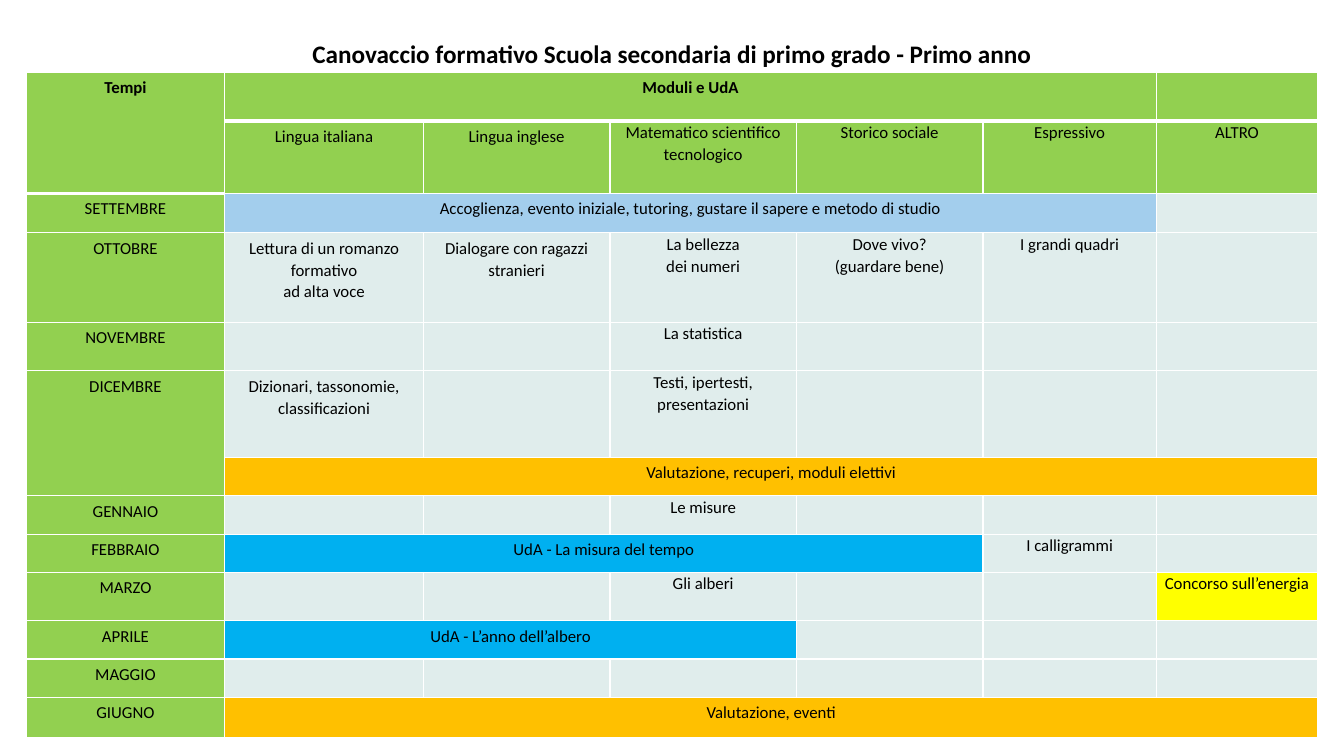
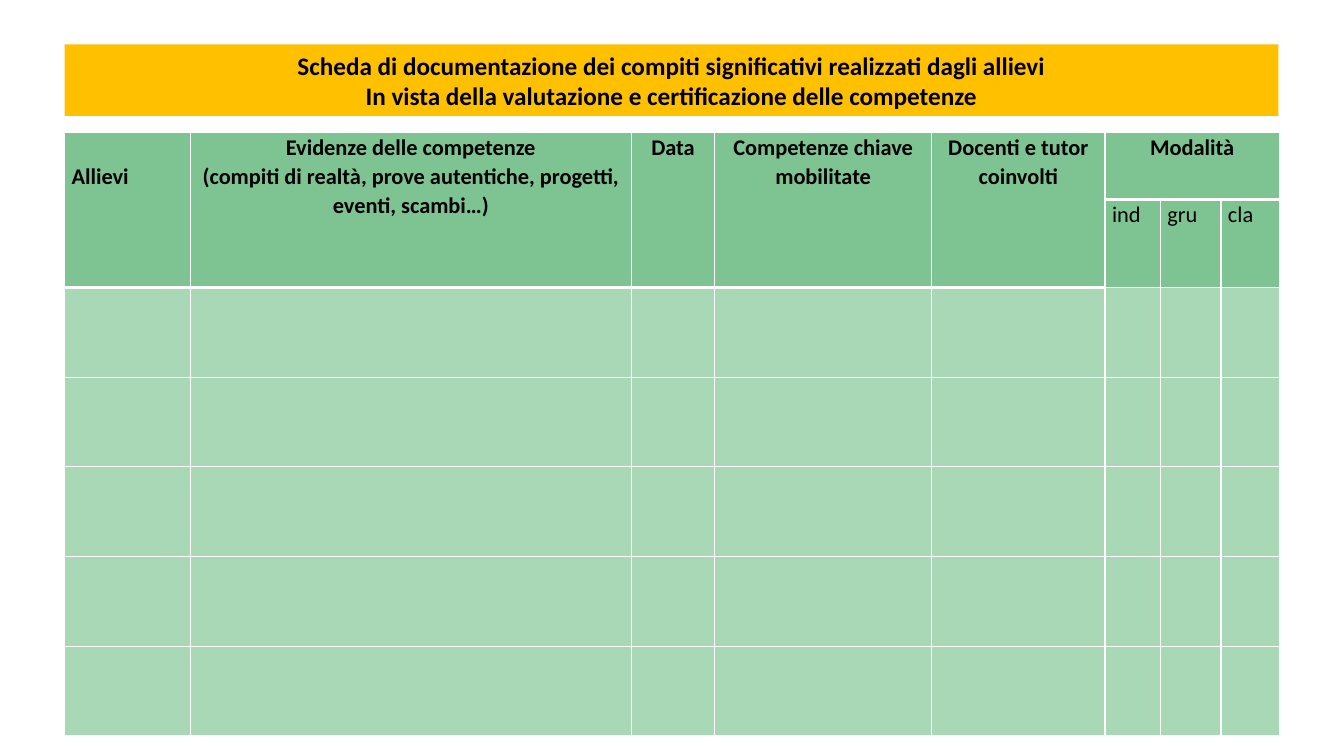
from typing import NamedTuple

from lxml.etree import SubElement
from pptx import Presentation
from pptx.dml.color import RGBColor
from pptx.enum.shapes import MSO_SHAPE
from pptx.enum.text import MSO_ANCHOR, PP_ALIGN
from pptx.oxml.ns import qn
from pptx.util import Inches, Pt

FONT = "Calibri"
BLACK, WHITE = "000000", "FFFFFF"
GREEN, MIST, SKY, BLUE, AMBER, YELLOW = (
    "92D050", "E0EDEC", "A3CEED", "00B0F0", "FFC000", "FFFF00")
SAGE, LIGHT_SAGE = "7EC492", "A9D8B7"
LINE_SPACING = 1.07


class Entry(NamedTuple):
    """Cell content with its reach in columns and rows."""
    text: str
    cols: int = 1
    rows: int = 1
    fill: str = ""


PLAN_TITLE = ["Canovaccio formativo Scuola secondaria di primo grado - Primo anno"]
PLAN_COLUMNS = [1.97, 1.97, 1.85, 1.85, 1.85, 1.72, 1.6]
# (row height, {column: entry})
PLAN_ROWS = [
    (0.48, {0: Entry("Tempi", rows=2), 1: Entry("Moduli e UdA", cols=5)}),
    (0.72, {1: Entry("Lingua italiana"), 2: Entry("Lingua inglese"),
            3: Entry("Matematico scientifico tecnologico"),
            4: Entry("Storico sociale"), 5: Entry("Espressivo"), 6: Entry("ALTRO")}),
    (0.39, {0: Entry("SETTEMBRE"),
            1: Entry("Accoglienza, evento iniziale, tutoring, gustare il sapere"
                     " e metodo di studio", cols=5, fill=SKY)}),
    (0.89, {0: Entry("OTTOBRE"),
            1: Entry("Lettura di un romanzo formativo\nad alta voce"),
            2: Entry("Dialogare con ragazzi stranieri"),
            3: Entry("La bellezza\ndei numeri"),
            4: Entry("Dove vivo?\n(guardare bene)"), 5: Entry("I grandi quadri")}),
    (0.48, {0: Entry("NOVEMBRE"), 3: Entry("La statistica")}),
    (0.86, {0: Entry("DICEMBRE", rows=2),
            1: Entry("Dizionari, tassonomie, classificazioni"),
            3: Entry("Testi, ipertesti, presentazioni")}),
    (0.38, {1: Entry("Valutazione, recuperi, moduli elettivi", cols=6, fill=AMBER)}),
    (0.38, {0: Entry("GENNAIO"), 3: Entry("Le misure")}),
    (0.38, {0: Entry("FEBBRAIO"),
            1: Entry("UdA - La misura del tempo", cols=4, fill=BLUE),
            5: Entry("I calligrammi")}),
    (0.48, {0: Entry("MARZO"), 3: Entry("Gli alberi"),
            6: Entry("Concorso sull’energia", fill=YELLOW)}),
    (0.38, {0: Entry("APRILE"), 1: Entry("UdA - L’anno dell’albero", cols=3, fill=BLUE)}),
    (0.38, {0: Entry("MAGGIO")}),
    (0.40, {0: Entry("GIUGNO"), 1: Entry("Valutazione, eventi", cols=6, fill=AMBER)}),
]

RECORD_TITLE = [
    "Scheda di documentazione dei compiti significativi realizzati dagli allievi",
    "In vista della valutazione e certificazione delle competenze",
]
RECORD_COLUMNS = [1.25, 4.37, 0.83, 2.15, 1.72, 0.55, 0.6, 0.58]
RECORD_ROWS = [
    (0.67, {0: Entry("Allievi", rows=2),
            1: Entry("Evidenze delle competenze\n(compiti di realtà, prove autentiche,"
                     " progetti, eventi, scambi…)", rows=2),
            2: Entry("Data", rows=2),
            3: Entry("Competenze chiave mobilitate", rows=2),
            4: Entry("Docenti e tutor coinvolti", rows=2),
            5: Entry("Modalità", cols=3)}),
    (0.52, {5: Entry("ind"), 6: Entry("gru"), 7: Entry("cla")}),
] + [(0.89, {})] * 5


def rgb(hex_color):
    return RGBColor.from_string(hex_color)


def paint(target, hex_color):
    target.fill.solid()
    target.fill.fore_color.rgb = rgb(hex_color)


def write(frame, lines, size, bold, align=PP_ALIGN.CENTER, spacing=LINE_SPACING):
    frame.word_wrap = True
    for index, line in enumerate(lines):
        paragraph = frame.add_paragraph() if index else frame.paragraphs[0]
        paragraph.alignment = align
        paragraph.line_spacing = spacing
        run = paragraph.add_run()
        run.text = line
        run.font.name, run.font.size, run.font.bold = FONT, Pt(size), bold
        run.font.color.rgb = rgb(BLACK)


def add_title(slide, lines, box, fill, spacing):
    banner = slide.shapes.add_shape(MSO_SHAPE.RECTANGLE, *map(Inches, box))
    banner.shadow.inherit = False
    banner.line.fill.background()
    paint(banner, fill)
    banner.text_frame.vertical_anchor = MSO_ANCHOR.MIDDLE
    write(banner.text_frame, lines, 18, True, spacing=spacing)


def add_borders(cell, bottom):
    """White cell borders; they must precede the fill in the XML."""
    properties = cell._tc.get_or_add_tcPr()
    for side, width in (("L", 1), ("R", 1), ("T", 1), ("B", bottom)):
        line = SubElement(properties, qn(f"a:ln{side}"), w=str(Pt(width)))
        solid = SubElement(line, qn("a:solidFill"))
        SubElement(solid, qn("a:srgbClr"), val=WHITE)


def set_margins(cell, side, top, bottom):
    cell.margin_left = cell.margin_right = Inches(side)
    cell.margin_top, cell.margin_bottom = Inches(top), Inches(bottom)


def add_grid(slide, left, top, columns, rows, size, fill_of, margins_of, align_of):
    """Draw a table; the *_of functions give a cell's look from row and column."""
    heights = [height for height, _ in rows]
    table = slide.shapes.add_table(
        len(rows), len(columns), Inches(left), Inches(top),
        Inches(sum(columns)), Inches(sum(heights))).table
    table.first_row = table.horz_banding = False
    for column, width in zip(table.columns, columns):
        column.width = Inches(width)
    for row, height in zip(table.rows, heights):
        row.height = Inches(height)

    covered = set()
    for r, (_, entries) in enumerate(rows):
        for c in range(len(columns)):
            if (r, c) in covered:
                continue
            entry = entries.get(c, Entry(""))
            area = [(r + i, c + j) for i in range(entry.rows) for j in range(entry.cols)]
            covered.update(area)
            for place in area:
                part = table.cell(*place)
                add_borders(part, 1 if r else 3)
                paint(part, entry.fill or fill_of(r, c))
            cell = table.cell(r, c)
            if len(area) > 1:
                cell.merge(table.cell(*area[-1]))
            if entry.text:
                set_margins(cell, *margins_of(r, c))
                write(cell.text_frame, entry.text.split("\n"), size, r == 0, align_of(r, c))
            else:
                set_margins(cell, 0, 0, 0)


def add_plan(slide):
    add_grid(
        slide, 0.26, 0.72, PLAN_COLUMNS, PLAN_ROWS, 12,
        fill_of=lambda r, c: GREEN if r < 2 or c == 0 else MIST,
        margins_of=lambda r, c: (0.07, 0.04, 0.04) if c < 3 else (0, 0, 0),
        align_of=lambda r, c: PP_ALIGN.CENTER)
    add_title(slide, PLAN_TITLE, (0.26, 0.31, 12.81, 0.41), WHITE, LINE_SPACING)


def add_record(slide):
    add_grid(
        slide, 0.64, 1.31, RECORD_COLUMNS, RECORD_ROWS, 16,
        fill_of=lambda r, c: SAGE if r < 2 else LIGHT_SAGE,
        margins_of=lambda r, c: (0.07, 0 if c else 0.29, 0),
        align_of=lambda r, c: PP_ALIGN.LEFT if r or c == 0 else PP_ALIGN.CENTER)
    add_title(slide, RECORD_TITLE, (0.64, 0.44, 12.04, 0.71), AMBER, 1.0)


def main():
    deck = Presentation()
    deck.slide_width, deck.slide_height = Inches(13.33), Inches(7.5)
    for add_content in (add_plan, add_record):
        add_content(deck.slides.add_slide(deck.slide_layouts[6]))
    deck.save("out.pptx")


if __name__ == "__main__":
    main()
